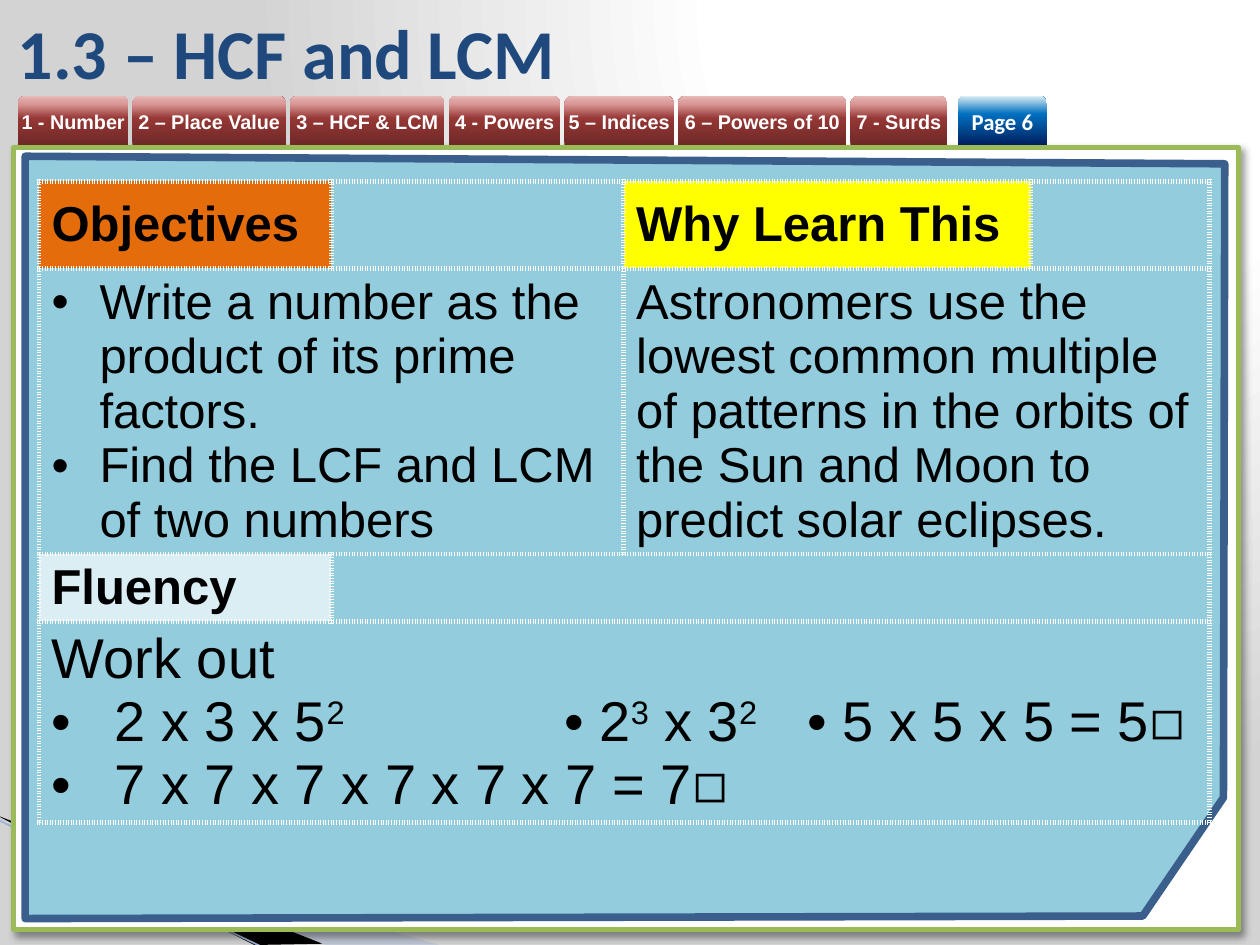
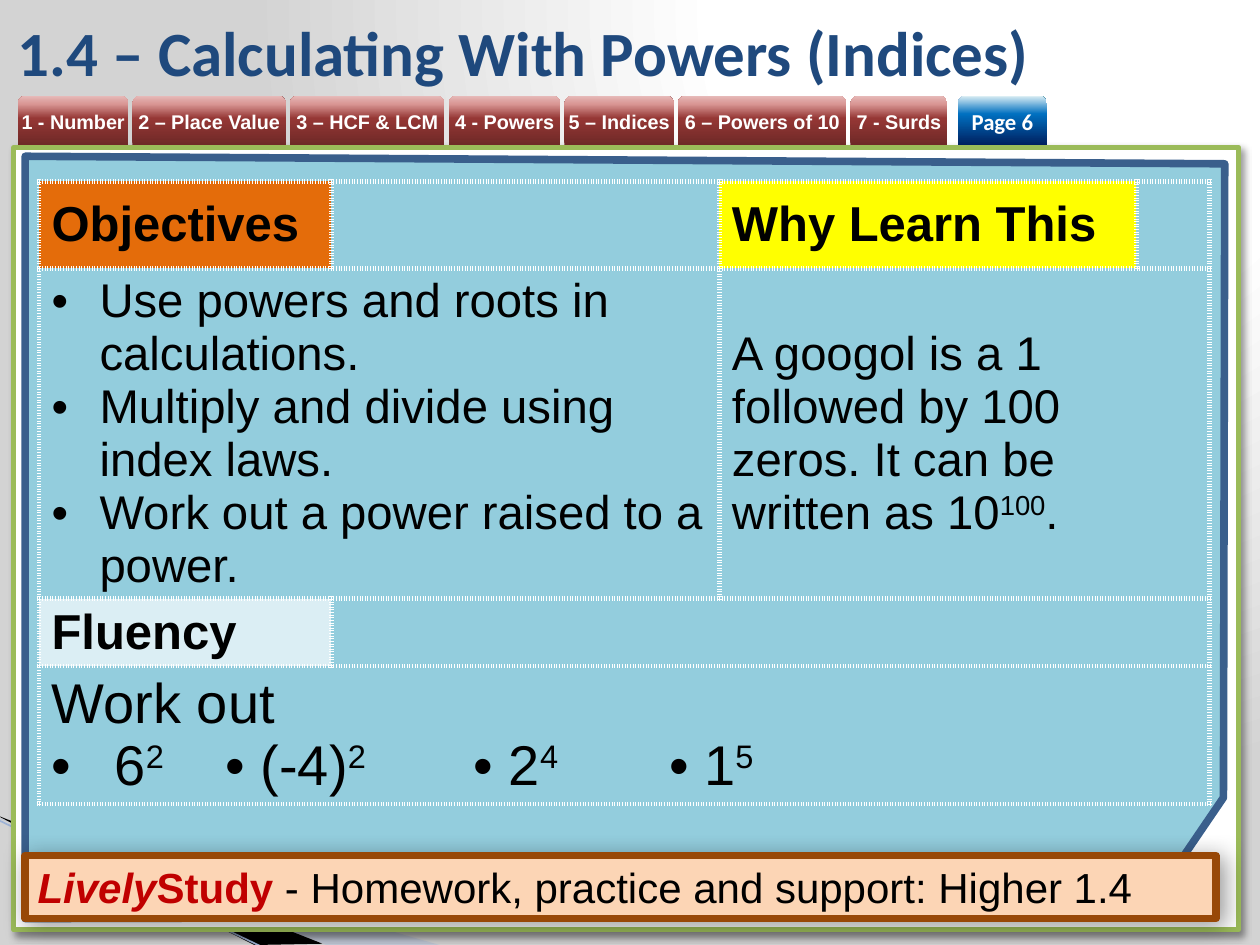
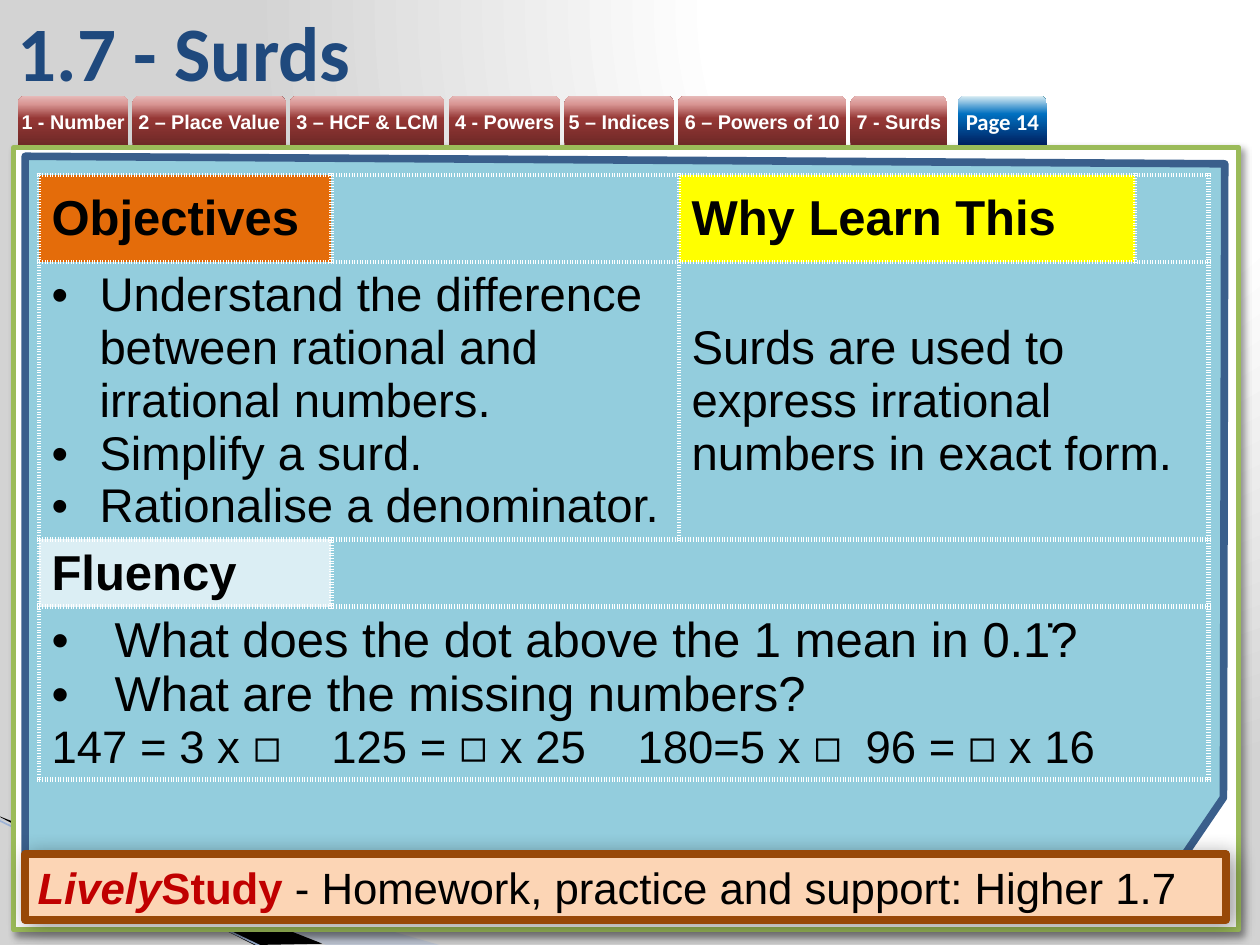
"""Build three maths lesson slides with chapter tabs, objectives tables and homework bars."""
import pptx
import pptx.dml.color
import pptx.enum.dml
import pptx.enum.shapes
import pptx.enum.text
import pptx.oxml
import pptx.oxml.ns
import pptx.util
import lxml.etree

Inches = pptx.util.Inches
Pt = pptx.util.Pt
qn = pptx.oxml.ns.qn
SHAPE = pptx.enum.shapes.MSO_SHAPE
MIDDLE = pptx.enum.text.MSO_ANCHOR.MIDDLE
CENTER = pptx.enum.text.PP_ALIGN.CENTER
LEFT = pptx.enum.text.PP_ALIGN.LEFT


class Theme:
    """Colours, fonts and type sizes."""
    body, head = "Arial", "Calibri"
    black, white, navy = "000000", "FFFFFF", "1F497D"
    card, edge = "93CDDD", "3A5F8C"
    green, pale, rule = "9BBB59", "A7B9DB", "9EB3D6"
    goal, why, drill = "E46C0A", "FFFF00", "DBEEF4"
    peach, brown, red = "FCD5B5", "984807", "C00000"
    back = [(0, white), (40, white), (100, "D3D3D3")]
    tab = [(0, "6F2927"), (54, "953735"), (83, "D99694"), (100, "E6B9B8")]
    page = [(0, "002060"), (63, "0070C0"), (100, "DBEEF4")]
    label, number, text, sums = 11.3, 13, 28, 32


TABS = [("1 - Number", 0.88), ("2 – Place Value", 1.22), ("3 – HCF & LCM", 1.23),
        ("4 - Powers", 0.89), ("5 – Indices", 0.87), ("6 – Powers of 10", 1.34),
        ("7 - Surds", 0.77)]
ROWS = [0.69, 0.69, 0.34, 0.34]


def item(text, **fmt):
    """Describe a bulleted sum or question."""
    return dict(text=text, hang=0.5, **fmt)


LESSONS = [
    dict(title="1.3 – HCF and LCM", size=40, page="Page 6",
         top=1.44, high=5.39, cols=[2.32, 2.32, 3.23, 1.42], text=28,
         goals=["Write a number as the product of its prime factors.",
                "Find the LCF and LCM of two numbers"],
         why="Astronomers use the lowest common multiple of patterns in the orbits "
             "of the Sun and Moon to predict solar eclipses.",
         sums=["Work out",
               item("2 x 3 x 5^2^\t• 2^3^ x 3^2^\t• 5 x 5 x 5 = 5◻", stops=[2.32, 4.07]),
               item("7 x 7 x 7 x 7 x 7 x 7 = 7◻")]),
    dict(title="1.4 – Calculating With Powers (Indices)", size=36, page="Page 6",
         top=1.44, high=5.22, cols=[2.32, 3.08, 3.31, 0.58], text=27,
         goals=["Use powers and roots in calculations.",
                "Multiply and divide using index laws.",
                "Work out a power raised to a power."],
         why="A googol is a 1 followed by 100 zeros. It can be written as 10^100^.",
         sums=["Work out",
               item("6^2^\t• (-4)^2^\t• 2^4^\t• 1^5^", stops=[1.38, 3.35, 4.9])],
         bar=("Higher 1.4", 24, (0.2, 6.79, 9.45, 0.5))),
    dict(title="1.7 - Surds", size=44, page="Page 14",
         top=1.39, high=5.07, cols=[2.32, 2.76, 3.62, 0.58], text=27,
         goals=["Understand the difference between rational and irrational numbers.",
                "Simplify a surd.", "Rationalise a denominator."],
         why="Surds are used to express irrational numbers in exact form.",
         sums=[item("What does the dot above the 1 mean in 0.1̇?", size=28),
               item("What are the missing numbers?", size=28),
               dict(text="147 = 3 x ◻\t125 = ◻ x 25\t180=5 x ◻\t96 = ◻ x 16",
                    size=26, stops=[2.22, 4.65, 6.46])],
         bar=("Higher 1.7", 25, (0.2, 6.78, 9.53, 0.52))),
]


def rgb(code):
    return pptx.dml.color.RGBColor.from_string(code)


def add(node, tag, **attrs):
    """Append a child element with attributes."""
    child = lxml.etree.SubElement(node, qn(tag))
    for key, value in attrs.items():
        child.set(key, str(value))
    return child


def write(frame, *paras, **base):
    """Fill a text frame; ^ marks switch superscript on and off."""
    frame.word_wrap = True
    for i, para in enumerate(paras):
        fmt = {**base, **(para if isinstance(para, dict) else dict(text=para))}
        line = frame.paragraphs[0] if i == 0 else frame.add_paragraph()
        line.alignment = fmt.get("align", LEFT)
        props = line._p.get_or_add_pPr()
        if "hang" in fmt:
            props.set("marL", str(Inches(fmt["hang"])))
            props.set("indent", str(-Inches(fmt["hang"])))
            add(props, "a:buFont", typeface=Theme.body)
            add(props, "a:buChar", char="•")
        if "stops" in fmt:
            tabs = add(props, "a:tabLst")
            for stop in fmt["stops"]:
                add(tabs, "a:tab", pos=Inches(stop), algn="l")
        parts = fmt["text"]
        for words, extra in [(parts, {})] if isinstance(parts, str) else parts:
            style = {**fmt, **extra}
            for n, piece in enumerate(words.split("^")):
                if not piece:
                    continue
                run = line.add_run()
                run.text = piece
                run.font.name = style.get("font", Theme.body)
                run.font.size = Pt(style["size"])
                run.font.bold = style.get("bold", False)
                run.font.italic = style.get("italic", False)
                run.font.color.rgb = rgb(style.get("color", Theme.black))
                if n % 2:
                    run._r.get_or_add_rPr().set("baseline", "30000")


def blend(fill, root, stops, focus=None):
    """Turn a fill into an upward or a circular gradient."""
    fill.gradient()
    node = root.find(".//" + qn("a:gradFill"))
    for child in list(node):
        node.remove(child)
    marks = add(node, "a:gsLst")
    for pos, color in stops:
        add(add(marks, "a:gs", pos=pos * 1000), "a:srgbClr", val=color)
    if focus:
        ring = add(node, "a:path", path="circle")
        add(ring, "a:fillToRect", **{k: v * 1000 for k, v in zip("ltrb", focus)})
    else:
        add(node, "a:lin", ang=16200000, scaled=0)


def paint(shape, fill=None, line=None, width=0, blur=0, alpha=100):
    """Set the fill, outline and shadow of a shape."""
    shape.shadow.inherit = False
    if fill:
        shape.fill.solid()
        shape.fill.fore_color.rgb = rgb(fill)
        if alpha < 100:
            tint = shape._element.spPr.find(".//" + qn("a:srgbClr"))
            add(tint, "a:alpha", val=alpha * 1000)
    if line:
        shape.line.color.rgb = rgb(line)
        shape.line.width = Pt(width)
    else:
        shape.line.fill.background()
    if blur:
        glow = shape._element.spPr.find(qn("a:effectLst"))
        cast = add(glow, "a:outerShdw", blurRad=Pt(blur), dist=Pt(3), dir=45 * 60000,
                   algn="tl", rotWithShape=0)
        add(add(cast, "a:srgbClr", val=Theme.black), "a:alpha", val=40000)


def box(slide, kind, at, **style):
    shape = slide.shapes.add_shape(kind, *map(Inches, at))
    paint(shape, **style)
    return shape


def poly(slide, points, **style):
    spots = [(Inches(x), Inches(y)) for x, y in points]
    pen = slide.shapes.build_freeform(*spots[0])
    pen.add_line_segments(spots[1:], close=True)
    paint(pen.convert_to_shape(), **style)


def tab(slide, text, left, width, stops, **fmt):
    shape = box(slide, SHAPE.ROUND_2_SAME_RECTANGLE, (left, 0.76, width, 0.39))
    blend(shape.fill, shape._element.spPr, stops)
    frame = shape.text_frame
    frame.margin_left = frame.margin_right = frame.margin_top = frame.margin_bottom = 0
    frame.vertical_anchor = MIDDLE
    write(frame, text, align=CENTER, color=Theme.white, bold=True, **fmt)


def stage(slide, page):
    """Draw the corner stripes, card and chapter tabs."""
    poly(slide, [(-0.01, 6.5), (3.49, 7.5), (2.59, 7.5), (-0.01, 6.49)],
         fill=Theme.pale, alpha=40)
    poly(slide, [(0, 6.48), (2.56, 7.49), (2.02, 7.5), (0.01, 6.49)], fill=Theme.black)
    rule = slide.shapes.add_connector(pptx.enum.shapes.MSO_CONNECTOR.STRAIGHT,
                                      *map(Inches, (-0.01, 6.51, 2.09, 7.52)))
    rule.line.color.rgb = rgb(Theme.rule)
    rule.line.width = Pt(0.95)
    add(rule._element.spPr, "a:effectLst")
    box(slide, SHAPE.RECTANGLE, (0.11, 1.17, 9.72, 6.21), fill=Theme.white,
        line=Theme.green, width=3, blur=4)
    poly(slide, [(0.2, 1.24), (9.72, 1.3), (9.71, 6.33), (9.07, 7.27), (0.2, 7.29)],
         fill=Theme.card, line=Theme.edge, width=4.33)
    left = 0.14
    for text, width in TABS:
        tab(slide, text, left, width, Theme.tab, size=Theme.label)
        left += width + 0.03
    tab(slide, page, 7.6, 0.71, Theme.page, size=Theme.number, font=Theme.head)


def grid(slide, lesson):
    """Add the table of objectives, reason and fluency sums."""
    cols = lesson["cols"]
    frame = slide.shapes.add_table(len(ROWS), len(cols), *map(
        Inches, (0.31, lesson["top"], sum(cols), lesson["high"])))
    table = frame.table
    table.first_row = table.horz_banding = False
    for col, width in zip(table.columns, cols):
        col.width = Inches(width)
    for row, height in zip(table.rows, ROWS):
        row.height = Inches(height)
    frame.height = Inches(lesson["high"])
    for row, first, last in [(1, 0, 1), (1, 2, 3), (2, 1, 3), (3, 0, 3)]:
        table.cell(row, first).merge(table.cell(row, last))
    for cell in table.iter_cells():
        cell.fill.background()
        cell.vertical_anchor = MIDDLE
        props = cell._tc.get_or_add_tcPr()
        for i, side in enumerate("LRTB"):
            edge = add(props, "a:ln" + side, w=Pt(3))
            add(add(edge, "a:solidFill"), "a:srgbClr", val=Theme.white)
            add(edge, "a:prstDash", val="sysDot")
            props.insert(i, edge)
    for row, col, text, fill in [(0, 0, "Objectives", Theme.goal),
                                 (0, 2, "Why Learn This", Theme.why),
                                 (2, 0, "Fluency", Theme.drill)]:
        cell = table.cell(row, col)
        cell.fill.solid()
        cell.fill.fore_color.rgb = rgb(fill)
        write(cell.text_frame, text, size=Theme.text, bold=True)
    write(table.cell(1, 0).text_frame, *lesson["goals"], size=lesson["text"], hang=0.38)
    write(table.cell(1, 2).text_frame, lesson["why"], size=lesson["text"])
    write(table.cell(3, 0).text_frame, *lesson["sums"], size=Theme.sums)


def bar(slide, unit, size, at):
    """Add the homework bar."""
    shape = box(slide, SHAPE.RECTANGLE, at, fill=Theme.peach, line=Theme.brown,
                width=4.33, blur=13)
    shape.text_frame.vertical_anchor = MIDDLE
    brand = dict(color=Theme.red, bold=True)
    write(shape.text_frame, dict(text=[
        ("Lively", dict(italic=True, **brand)), ("Study ", brand),
        ("- Homework, practice and support: " + unit, {})]), size=size)


def main():
    deck = pptx.Presentation()
    deck.slide_width, deck.slide_height = Inches(10), Inches(7.5)
    master = deck.slide_master
    blend(master.background.fill, master.element, Theme.back, focus=(65, 0, 0, 98))
    for lesson in LESSONS:
        slide = deck.slides.add_slide(deck.slide_layouts[5])
        title = slide.shapes.title
        title.left, title.top, title.width, title.height = map(
            Inches, (0.04, 0.05, 8.27, 0.71))
        title.text_frame.vertical_anchor = MIDDLE
        title.text_frame.auto_size = pptx.enum.text.MSO_AUTO_SIZE.NONE
        write(title.text_frame, lesson["title"], size=lesson["size"], bold=True,
              font=Theme.head, color=Theme.navy)
        stage(slide, lesson["page"])
        grid(slide, lesson)
        if "bar" in lesson:
            bar(slide, *lesson["bar"])
    deck.save("out.pptx")


if __name__ == "__main__":
    main()
